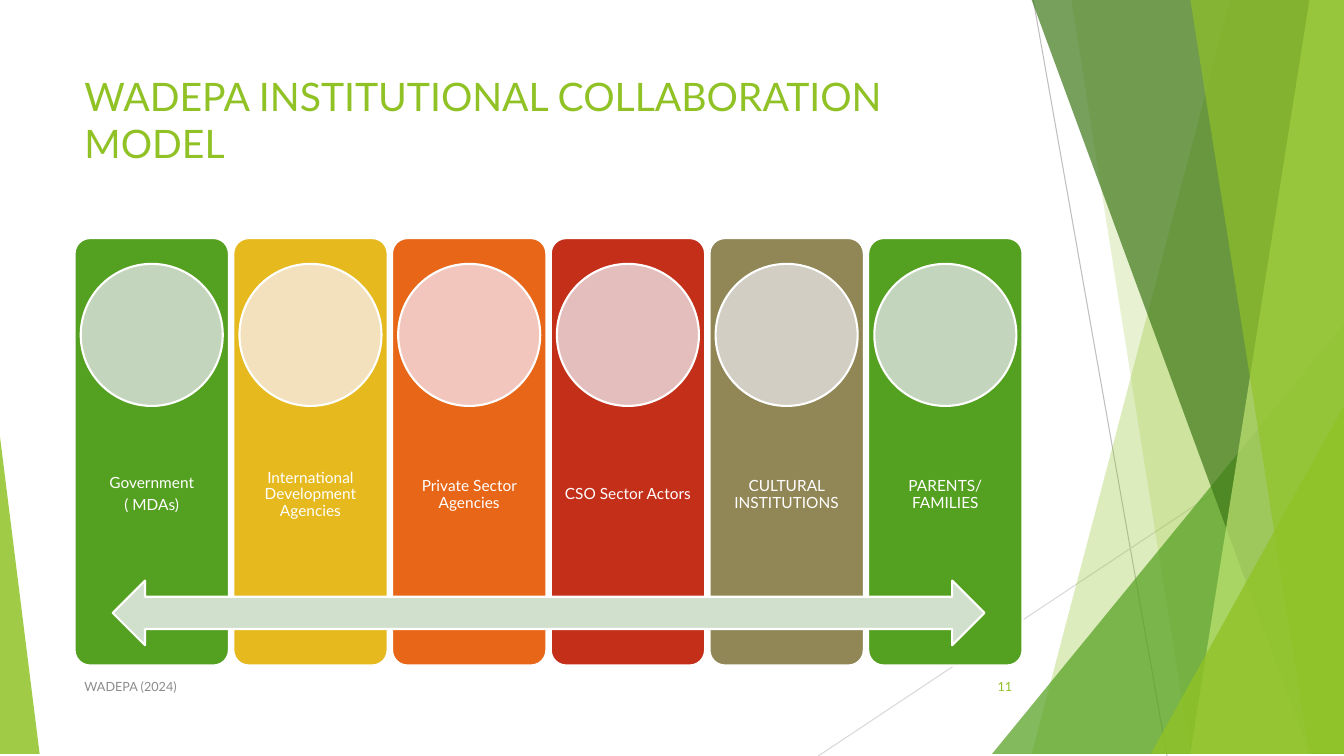
"""Build the WADEPA institutional collaboration model slide."""
from lxml import etree
from pptx import Presentation
from pptx.dml.color import RGBColor
from pptx.enum.shapes import MSO_CONNECTOR, MSO_SHAPE
from pptx.enum.text import MSO_ANCHOR, PP_ALIGN
from pptx.oxml.ns import qn
from pptx.util import Cm, Pt

STRAIGHT = MSO_CONNECTOR.STRAIGHT
PILLAR, DISC, ARROW = MSO_SHAPE.ROUNDED_RECTANGLE, MSO_SHAPE.OVAL, MSO_SHAPE.LEFT_RIGHT_ARROW
TOP, MIDDLE = MSO_ANCHOR.TOP, MSO_ANCHOR.MIDDLE
LEFT, CENTER, RIGHT = PP_ALIGN.LEFT, PP_ALIGN.CENTER, PP_ALIGN.RIGHT

WHITE = RGBColor(0xFF, 0xFF, 0xFF)
LIME = RGBColor(0x90, 0xC2, 0x26)
GREEN = RGBColor(0x54, 0xA0, 0x21)
DARK_GREEN = RGBColor(0x3F, 0x78, 0x19)
PALE_LIME = RGBColor(0xC0, 0xE4, 0x74)
YELLOW = RGBColor(0xE6, 0xB9, 0x1E)
ORANGE = RGBColor(0xE7, 0x66, 0x18)
RED = RGBColor(0xC4, 0x2F, 0x1A)
OLIVE = RGBColor(0x91, 0x86, 0x55)
PALE_GREEN = RGBColor(0xC3, 0xD6, 0xBD)
PALE_YELLOW = RGBColor(0xF3, 0xE0, 0xBD)
PALE_ORANGE = RGBColor(0xF3, 0xC6, 0xBD)
PALE_RED = RGBColor(0xE4, 0xBE, 0xBD)
PALE_OLIVE = RGBColor(0xD2, 0xCE, 0xC3)
ARROW_GREEN = RGBColor(0xD1, 0xDF, 0xCD)
GRAY = RGBColor(0x8C, 0x8C, 0x8C)
LINE_GRAY = RGBColor(0xBF, 0xBF, 0xBF)
LIGHT_GRAY = RGBColor(0xD9, 0xD9, 0xD9)

FONT = "Lato"
WIDTH, HEIGHT = 33.87, 19.05

RAYS = [
    ((26.04, 0), (29.41, HEIGHT), LINE_GRAY),
    ((WIDTH, 10.24), (20.62, HEIGHT), LIGHT_GRAY),
]
RIGHT_EDGE = [(WIDTH, 0), (WIDTH, HEIGHT)]
FACETS = [
    ([(31.19, 0), *RIGHT_EDGE, (25.5, HEIGHT)], LIME, 30),
    ([(26.67, 0), *RIGHT_EDGE, (30.05, HEIGHT)], LIME, 20),
    ([(WIDTH, 8.46), (WIDTH, HEIGHT), (24.82, HEIGHT)], GREEN, 72),
    ([(25.93, 0), *RIGHT_EDGE, (32.79, HEIGHT)], DARK_GREEN, 70),
    ([(33.1, 0), *RIGHT_EDGE, (30.28, HEIGHT)], PALE_LIME, 70),
    ([(30.38, 0), *RIGHT_EDGE, (33.48, HEIGHT)], LIME, 65),
    ([(WIDTH, 9.98), (WIDTH, HEIGHT), (28.8, HEIGHT)], LIME, 80),
    ([(0, 11.15), (1.24, HEIGHT), (0, HEIGHT)], LIME, 85),
]
PARTNERS = [
    (["Government", "( MDAs)"], GREEN, PALE_GREEN),
    (["International Development Agencies"], YELLOW, PALE_YELLOW),
    (["Private Sector Agencies"], ORANGE, PALE_ORANGE),
    (["CSO Sector Actors"], RED, PALE_RED),
    (["CULTURAL INSTITUTIONS"], OLIVE, PALE_OLIVE),
    (["PARENTS/FAMILIES"], GREEN, PALE_GREEN),
]
CAPTIONS = [
    (["WADEPA INSTITUTIONAL COLLABORATION MODEL"], (1.88, 1.7, 23.88, 3.66), 28, LIME, LEFT, TOP),
    (["11"], (23.85, 16.79, 1.91, 1.02), 9, LIME, RIGHT, MIDDLE),
    (["WADEPA (2024)"], (1.88, 16.79, 17.5, 1.02), 9, GRAY, LEFT, MIDDLE),
]
MARGIN, PITCH, PILLAR_WIDTH, DISC_SIZE = 1.88, 4.0, 3.89, 3.58
PILLAR_TOP, PILLAR_HEIGHT, DISC_TOP = 6.0, 10.77, 6.65
LABEL_TOP, LABEL_HEIGHT = 10.31, 4.32
ARROW_BOX = (2.84, 14.63, 21.97, 1.63)
LABEL_FORMAT = {"line_spacing": 0.9, "space_after": Pt(4)}


def add_ray(slide, start, end, color):
    ray = slide.shapes.add_connector(STRAIGHT, *map(Cm, start + end))
    ray.line.color.rgb = color
    ray.line.width = Pt(0.75)
    etree.SubElement(ray._element.spPr, qn("a:effectLst"))


def add_facet(slide, points, color, opacity):
    builder = slide.shapes.build_freeform(*points[0], scale=Cm(1))
    builder.add_line_segments(points[1:], close=True)
    facet = builder.convert_to_shape()
    facet.shadow.inherit = False
    facet.fill.solid()
    facet.fill.fore_color.rgb = color
    facet.line.fill.background()
    color_element = facet._element.spPr.find(qn("a:solidFill"))[0]
    etree.SubElement(color_element, qn("a:alpha"), val=str(opacity * 1000))


def add_figure(slide, kind, box, color):
    figure = slide.shapes.add_shape(kind, *map(Cm, box))
    figure.shadow.inherit = False
    figure.fill.solid()
    figure.fill.fore_color.rgb = color
    figure.line.color.rgb = WHITE
    figure.line.width = Pt(1.5)
    return figure


def add_text(slide, lines, box, size, color, align, anchor, spacing=None):
    frame = slide.shapes.add_textbox(*map(Cm, box)).text_frame
    frame.word_wrap = True
    frame.vertical_anchor = anchor
    frame.text = "\n".join(lines)
    paragraph_format = {"alignment": align, **(spacing or {})}
    font_format = {"name": FONT, "size": Pt(size)}
    for paragraph in frame.paragraphs:
        for name, value in paragraph_format.items():
            setattr(paragraph, name, value)
        font = paragraph.runs[0].font
        for name, value in font_format.items():
            setattr(font, name, value)
        font.color.rgb = color


def add_partner(slide, index, lines, color, disc_color):
    left = MARGIN + index * PITCH
    pillar = add_figure(slide, PILLAR, (left, PILLAR_TOP, PILLAR_WIDTH, PILLAR_HEIGHT), color)
    pillar.adjustments[0] = 0.1
    label_box = (left, LABEL_TOP, PILLAR_WIDTH, LABEL_HEIGHT)
    add_text(slide, lines, label_box, 11, WHITE, CENTER, MIDDLE, LABEL_FORMAT)
    disc_left = left + (PILLAR_WIDTH - DISC_SIZE) / 2
    add_figure(slide, DISC, (disc_left, DISC_TOP, DISC_SIZE, DISC_SIZE), disc_color)


def main():
    presentation = Presentation()
    presentation.slide_width, presentation.slide_height = Cm(WIDTH), Cm(HEIGHT)
    slide = presentation.slides.add_slide(presentation.slide_layouts[6])
    for ray in RAYS:
        add_ray(slide, *ray)
    for facet in FACETS:
        add_facet(slide, *facet)
    for index, partner in enumerate(PARTNERS):
        add_partner(slide, index, *partner)
    add_figure(slide, ARROW, ARROW_BOX, ARROW_GREEN)
    for caption in CAPTIONS:
        add_text(slide, *caption)
    presentation.save("out.pptx")


if __name__ == "__main__":
    main()
